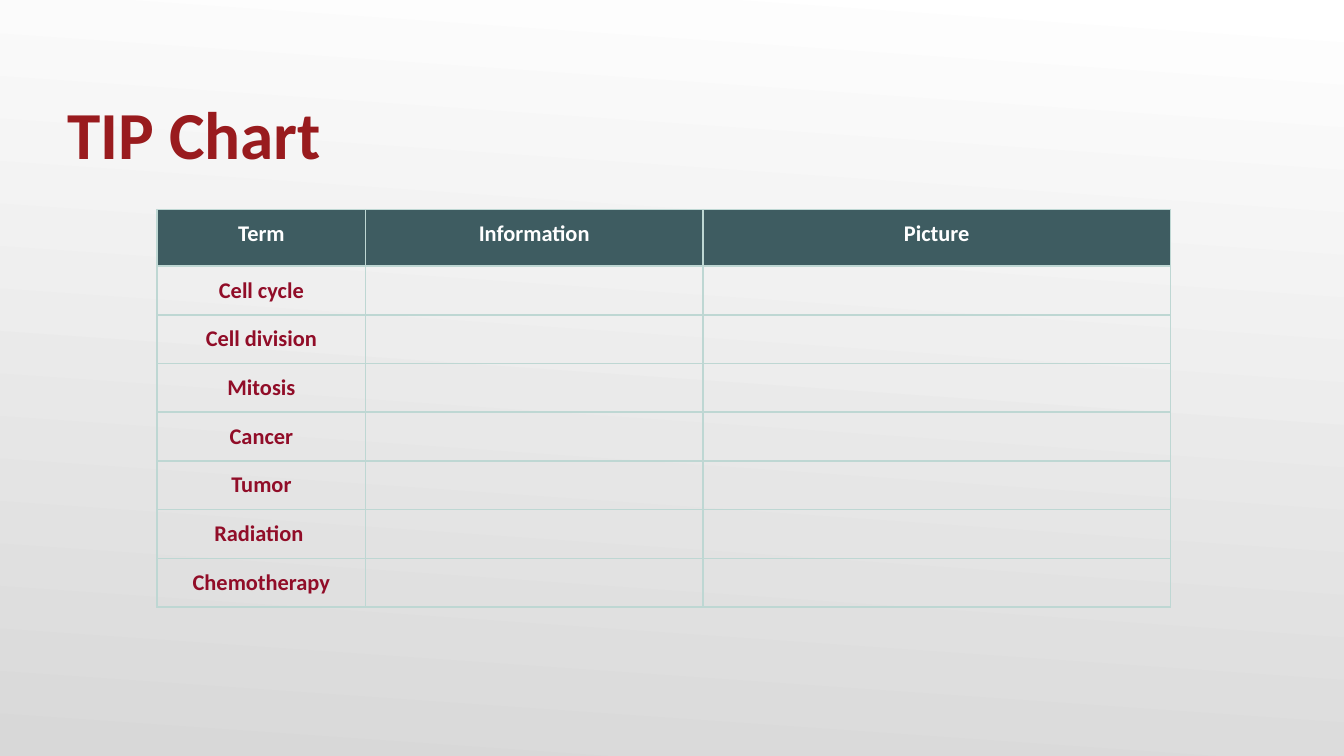
"""Build the TIP Chart vocabulary slide."""
from lxml import etree
from pptx import Presentation
from pptx.dml.color import RGBColor
from pptx.enum import text
from pptx.oxml import ns
from pptx.util import Inches, Pt

COLORS = {
    "top": "FFFFFF",
    "bottom": "D8D8D8",
    "title": "991B1E",
    "header": "3E5C61",
    "header_text": "FFFFFF",
    "term": "910D28",
    "border": "BED7D3",
}
HEADINGS = ["Term", "Information", "Picture"]
TERMS = ["Cell cycle", "Cell division", "Mitosis", "Cancer", "Tumor", "Radiation ", "Chemotherapy"]
COLUMN_WIDTHS = [1.55, 2.51, 3.48]
ROW_HEIGHTS = [0.42] + [2.54 / len(TERMS)] * len(TERMS)


def write(paragraph, words, size, color):
    run = paragraph.add_run()
    run.text = words
    for name, value in {"name": "Calibri", "size": Pt(size), "bold": True}.items():
        setattr(run.font, name, value)
    run.font.color.rgb = RGBColor.from_string(COLORS[color])


def add_borders(cell):
    properties = cell._tc.get_or_add_tcPr()
    for side in ("a:lnL", "a:lnR", "a:lnT", "a:lnB"):
        line = etree.SubElement(properties, ns.qn(side), w=str(Pt(1)))
        fill = etree.SubElement(line, ns.qn("a:solidFill"))
        etree.SubElement(fill, ns.qn("a:srgbClr"), val=COLORS["border"])


presentation = Presentation()
presentation.slide_width = Inches(10)
presentation.slide_height = Inches(10 * 9 / 16)
slide = presentation.slides.add_slide(presentation.slide_layouts[6])

background = slide.background.fill
background.gradient()
background.gradient_angle = 360 - 94
for stop, color in zip(background.gradient_stops, ("top", "bottom")):
    stop.color.rgb = RGBColor.from_string(COLORS[color])

title = slide.shapes.add_textbox(Inches(0.5), Inches(0.35), Inches(4.07), Inches(0.94)).text_frame
title_format = {
    "word_wrap": True,
    "vertical_anchor": text.MSO_ANCHOR.BOTTOM,
    "margin_left": 0,
    "margin_top": Inches(0.05),
    "margin_right": 0,
    "margin_bottom": 0,
}
for name, value in title_format.items():
    setattr(title, name, value)
write(title.paragraphs[0], "TIP Chart", 36, "title")

rows = [HEADINGS] + [[term, "", ""] for term in TERMS]
table = slide.shapes.add_table(
    len(rows), len(HEADINGS), Inches(1.17), Inches(1.56),
    Inches(sum(COLUMN_WIDTHS)), Inches(sum(ROW_HEIGHTS)),
).table
for column, width in zip(table.columns, COLUMN_WIDTHS):
    column.width = Inches(width)
for row, height in zip(table.rows, ROW_HEIGHTS):
    row.height = Inches(height)

for row_index, row in enumerate(rows):
    for column_index, words in enumerate(row):
        cell = table.cell(row_index, column_index)
        for side in ("left", "top", "right", "bottom"):
            setattr(cell, f"margin_{side}", Inches(0.08))
        add_borders(cell)
        if row_index == 0:
            cell.fill.solid()
            cell.fill.fore_color.rgb = RGBColor.from_string(COLORS["header"])
        else:
            cell.fill.background()
        paragraph = cell.text_frame.paragraphs[0]
        paragraph.alignment = text.PP_ALIGN.CENTER
        if words:
            write(paragraph, words, 12, "term" if row_index else "header_text")
        else:
            etree.SubElement(paragraph._p, ns.qn("a:endParaRPr"), sz="1200")

presentation.save("out.pptx")
